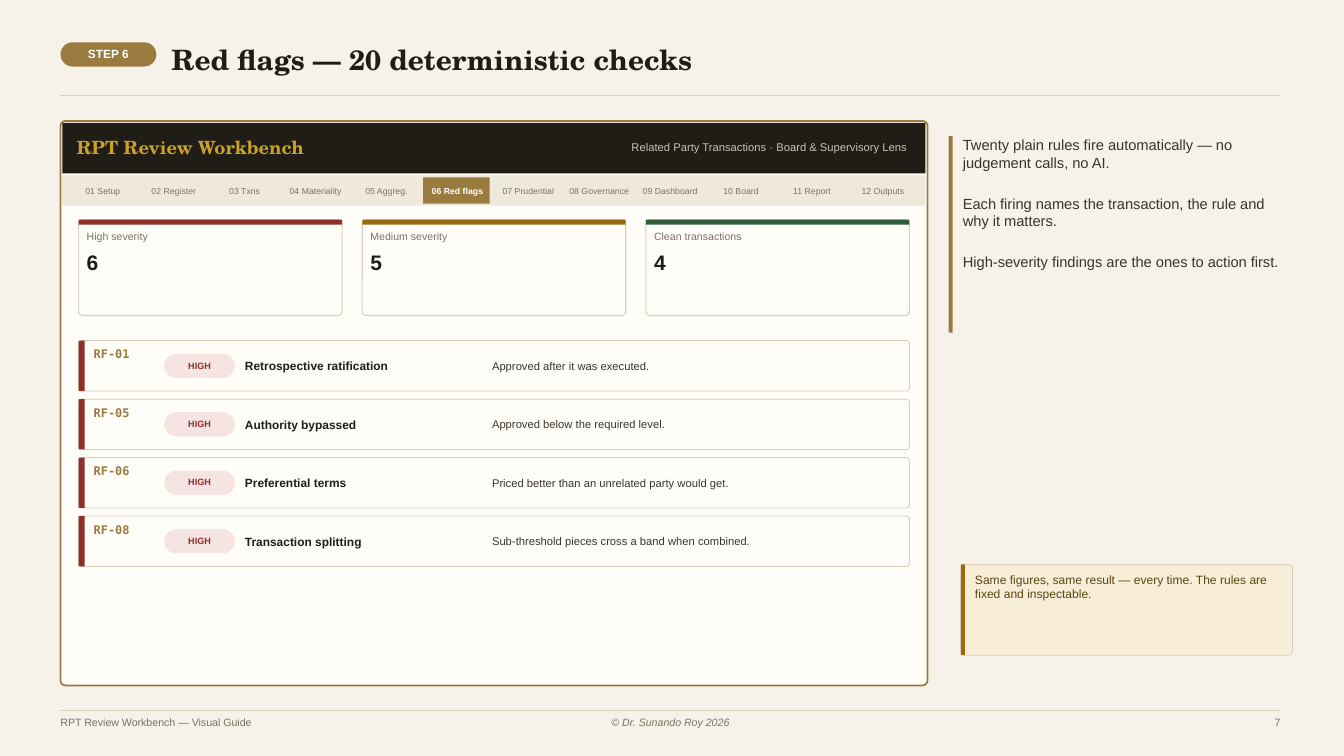
from pptx import Presentation
from pptx import util as u
from pptx.dml.color import RGBColor
from pptx.enum import shapes, text
from pptx.oxml.ns import qn
from lxml import etree

PX = 9144  # EMU per px, 100 px to the inch

PAPER, CARD, BAND, RULE = "F6F2E9", "FFFDF8", "EFE9DC", "D8CFBC"
INK, BODY, MUTED, GOLD = "201C16", "3A352C", "7B7263", "9A7B3F"
RED, AMBER, GREEN, WHITE = "8F2F2A", "9A6A12", "2F5D3C", "FFFFFF"
SERIF, SANS, MONO = "TeX Gyre Schola", "Arial", "DejaVu Sans Mono"

STEP = "STEP 6"
TITLE = "Red flags — 20 deterministic checks"
APP = "RPT Review Workbench"
LENS = "Related Party Transactions · Board & Supervisory Lens"
TABS = ["01 Setup", "02 Register", "03 Txns", "04 Materiality", "05 Aggreg.",
        "06 Red flags", "07 Prudential", "08 Governance", "09 Dashboard",
        "10 Board", "11 Report", "12 Outputs"]
ACTIVE = "06 Red flags"
CARDS = [("High severity", "6", RED),
         ("Medium severity", "5", AMBER),
         ("Clean transactions", "4", GREEN)]
LEVEL = "HIGH"
FLAGS = [
    ("RF-01", "Retrospective ratification", "Approved after it was executed."),
    ("RF-05", "Authority bypassed", "Approved below the required level."),
    ("RF-06", "Preferential terms",
     "Priced better than an unrelated party would get."),
    ("RF-08", "Transaction splitting",
     "Sub-threshold pieces cross a band when combined."),
]
NOTES = ["Twenty plain rules fire automatically — no judgement calls, no AI.",
         "Each firing names the transaction, the rule and why it matters.",
         "High-severity findings are the ones to action first."]
CALLOUT = ("Same figures, same result — every time. "
           "The rules are fixed and inspectable.")
GUIDE = "RPT Review Workbench — Visual Guide"
RIGHTS = "© Dr. Sunando Roy 2026"
PAGE = "7"

ALIGN = {"l": text.PP_ALIGN.LEFT, "c": text.PP_ALIGN.CENTER,
         "r": text.PP_ALIGN.RIGHT}

deck = Presentation()
deck.slide_width, deck.slide_height = 1333 * PX, 750 * PX
slide = deck.slides.add_slide(deck.slide_layouts[6])


def color(code):
    return RGBColor.from_string(code)


def emu(*sizes):
    return [round(size * PX) for size in sizes]


def box(x, y, w, h, fill, radius=0, line=None, weight=0.75):
    """Draw a filled rectangle; radius is in px."""
    kind = shapes.MSO_SHAPE
    shape = slide.shapes.add_shape(
        kind.ROUNDED_RECTANGLE if radius else kind.RECTANGLE, *emu(x, y, w, h))
    shape.shadow.inherit = False
    if radius:
        shape.adjustments[0] = radius / min(w, h)
    shape.fill.solid()
    shape.fill.fore_color.rgb = color(fill)
    if line:
        shape.line.color.rgb = color(line)
        shape.line.width = u.Pt(weight)
    else:
        shape.line.fill.background()


def write(words, x, y, w, h, size, ink=MUTED, font=SANS, align="l",
          middle=False, bold=False, italic=False):
    frame = slide.shapes.add_textbox(*emu(x, y, w, h)).text_frame
    frame.word_wrap = True
    frame.margin_left = frame.margin_right = 0
    frame.margin_top = frame.margin_bottom = 0
    anchor = text.MSO_ANCHOR
    frame.vertical_anchor = anchor.MIDDLE if middle else anchor.TOP
    para = frame.paragraphs[0]
    para.alignment = ALIGN[align]
    run = para.add_run()
    run.text = words
    run.font.name, run.font.size = font, u.Pt(size)
    run.font.bold, run.font.italic = bold, italic
    run.font.color.rgb = color(ink)


def rule(y, weight):
    """Draw a line across the page between the side margins."""
    line = slide.shapes.add_connector(
        shapes.MSO_CONNECTOR.STRAIGHT, *emu(60, y, 1270, y))
    line.line.color.rgb = color(RULE)
    line.line.width = u.Pt(weight)
    etree.SubElement(line._element.spPr, qn("a:effectLst"))


def pill(words, x, y, w, size, fill, ink):
    box(x, y, w, 24, fill, radius=12)
    write(words, x, y - 1, w, 25, size, ink, align="c", middle=True, bold=True)


def header():
    pill(STEP, 60, 42, 95, 8.5, GOLD, WHITE)
    write(TITLE, 170, 34, 850, 50, 20, INK, SERIF, middle=True, bold=True)
    rule(95, 0.75)


def window():
    box(60, 120, 860, 560, CARD, radius=5, line=GOLD, weight=1.25)
    box(62, 122, 856, 50, INK)
    write(APP, 76, 126, 450, 40, 13, "C9A227", SERIF, middle=True, bold=True)
    write(LENS, 450, 126, 450, 40, 8, "CBC2B0", align="r", middle=True)
    box(62, 174, 856, 30, BAND)
    pitch = (918 - 62 - 12) / len(TABS)
    for i, name in enumerate(TABS):
        x, on = 68 + i * pitch, name == ACTIVE
        if on:
            box(x, 176, 66, 26, GOLD)
        write(name, x, 175, 68, 30, 6.2, WHITE if on else MUTED,
              align="c", middle=True, bold=on)


def cards():
    left, top, gap = 78, 218, 20
    w = (824 - gap * (len(CARDS) - 1)) / len(CARDS)
    for i, (label, count, tone) in enumerate(CARDS):
        x = left + i * (w + gap)
        box(x, top, w, 95, CARD, radius=4, line=RULE)
        box(x, top, w, 5, tone)
        write(label, x + 8, top + 10, w - 16, 30, 7.5)
        write(count, x + 8, top + 30, w - 16, 40, 15, INK, bold=True)


def flags():
    for i, (code, name, why) in enumerate(FLAGS):
        y = 338 + i * 58
        box(78, y, 824, 50, CARD, radius=3, line=RULE, weight=0.6)
        box(78, y, 6, 50, RED)
        write(code, 93, y + 6, 70, 40, 8.5, GOLD, MONO, bold=True)
        pill(LEVEL, 163, y + 13, 70, 6.5, "F6E4E2", RED)
        write(name, 243, y + 5, 240, 40, 8.5, INK, middle=True, bold=True)
        write(why, 488, y + 5, 399, 40, 8, BODY, middle=True)


def aside():
    box(941, 135, 4, 195, GOLD)
    for i, note in enumerate(NOTES):
        write(note, 955, 135 + i * 58, 325, 70, 10.5, BODY)
    box(953, 560, 329, 90, "F8EED7", radius=4, line=RULE, weight=0.5)
    box(953, 560, 4, 90, AMBER)
    write(CALLOUT, 967, 568, 305, 80, 8.6, "5A4415")


def footer():
    rule(705, 0.6)
    write(GUIDE, 60, 710, 600, 30, 7.6)
    write(RIGHTS, 500, 710, 330, 30, 7.6, align="c", italic=True)
    write(PAGE, 1200, 710, 70, 30, 7.6, align="r")


def main():
    slide.background.fill.solid()
    slide.background.fill.fore_color.rgb = color(PAPER)
    for part in (header, window, cards, flags, aside, footer):
        part()
    deck.save("out.pptx")


if __name__ == "__main__":
    main()
